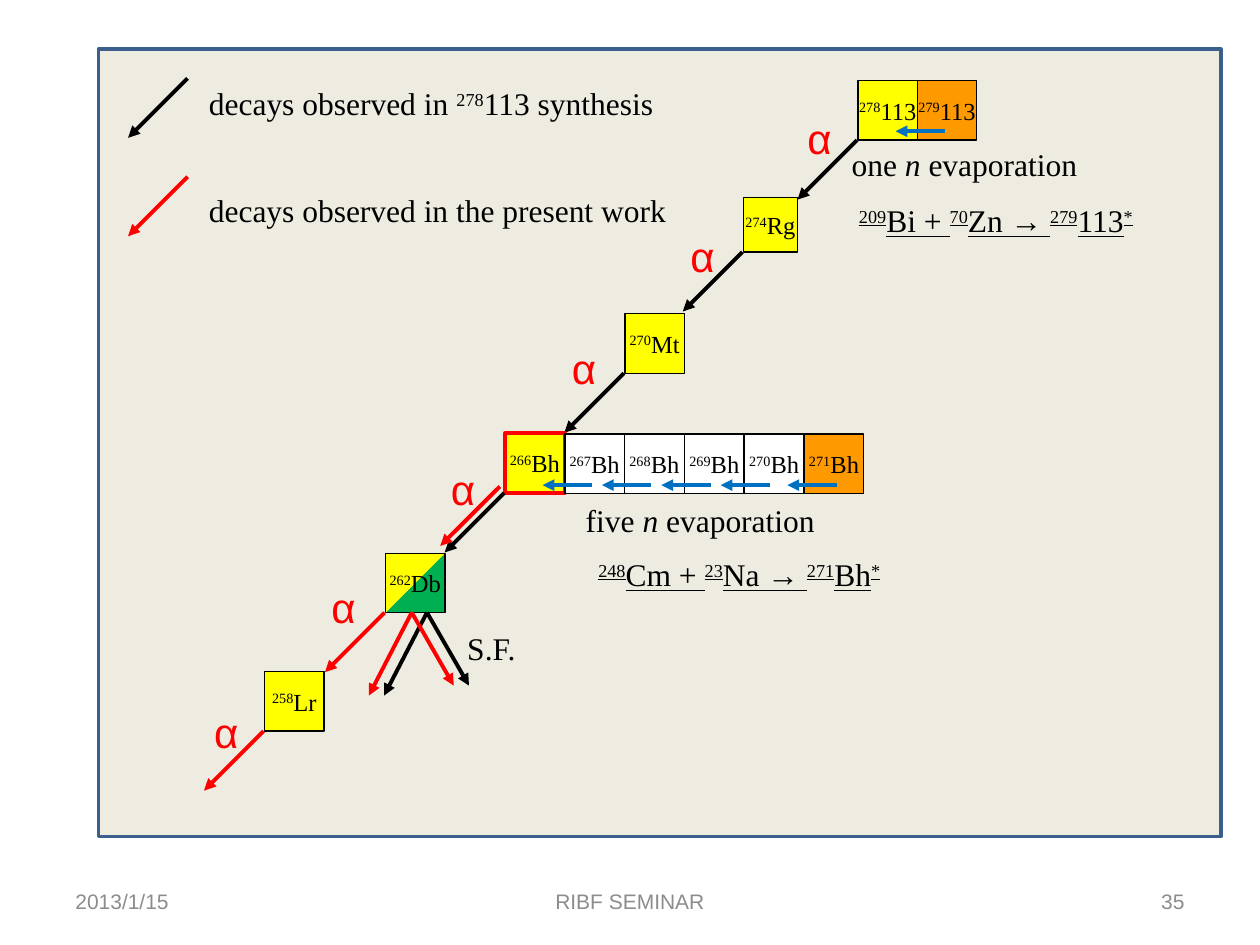
from pptx import Presentation
from pptx.dml.color import RGBColor
from pptx.enum.shapes import MSO_CONNECTOR, MSO_SHAPE
from pptx.enum.text import MSO_ANCHOR, MSO_AUTO_SIZE, PP_ALIGN
from pptx.oxml.ns import qn
from pptx.util import Pt
from lxml import etree

LINE = MSO_CONNECTOR.STRAIGHT
RECT, WEDGE = MSO_SHAPE.RECTANGLE, MSO_SHAPE.RIGHT_TRIANGLE
TOP, MIDDLE = MSO_ANCHOR.TOP, MSO_ANCHOR.MIDDLE
GROW, FIXED = MSO_AUTO_SIZE.SHAPE_TO_FIT_TEXT, MSO_AUTO_SIZE.NONE
LEFT, CENTER, RIGHT = PP_ALIGN.LEFT, PP_ALIGN.CENTER, PP_ALIGN.RIGHT

SERIF, SANS = "Times New Roman", "Arial"
BLACK, RED, BLUE, GRAY = "000000", "FF0000", "0070C0", "8C8C8C"
YELLOW, ORANGE, GREEN, WHITE = "FFFF00", "FF9900", "00B050", "FFFFFF"
CELL = 34


def color(code):
    """Turn a hex string into a colour."""
    return RGBColor.from_string(code)


class Chart:
    """Draw decay chart elements on one slide."""

    def __init__(self, slide):
        """Keep the slide to draw on."""
        self.slide = slide

    def shape(self, kind, box, fill=None, line=None, width=0.75):
        """Add a flat preset shape."""
        shape = self.slide.shapes.add_shape(kind, *map(Pt, box))
        shape.shadow.inherit = False
        if fill:
            shape.fill.solid()
            shape.fill.fore_color.rgb = color(fill)
        else:
            shape.fill.background()
        if line:
            shape.line.color.rgb = color(line)
            shape.line.width = Pt(width)
        else:
            shape.line.fill.background()
        return shape

    def wedge(self, box, fill, flip):
        """Add a right triangle mirrored along one axis."""
        shape = self.shape(WEDGE, box, fill)
        shape._element.spPr.xfrm.set(flip, "1")

    def text(self, frame, runs, size, font=SERIF, ink=BLACK, align=LEFT):
        """Add runs whose marks are ^ raised, i italic, u underlined."""
        para = frame.paragraphs[0]
        para.alignment = align
        for words, marks in runs:
            run = para.add_run()
            run.text = words
            run.font.size = Pt(size)
            run.font.name = font
            run.font.color.rgb = color(ink)
            if "i" in marks:
                run.font.italic = True
            if "u" in marks:
                run.font.underline = True
            if "^" in marks:
                run._r.get_or_add_rPr().set("baseline", "30000")

    def cell(self, mass, name, x, y, size=CELL, fill=None, line=BLACK, width=0.75):
        """Add one nuclide box."""
        frame = self.shape(RECT, (x, y, size, size), fill, line, width).text_frame
        frame.word_wrap = False
        frame.vertical_anchor = MIDDLE
        self.text(frame, [(mass, "^"), (name, "")], 14, align=CENTER)

    def label(self, box, runs, size=18, font=SERIF, ink=BLACK):
        """Add an unwrapped text box that fits its text."""
        frame = self.slide.shapes.add_textbox(*map(Pt, box)).text_frame
        frame.word_wrap = False
        frame.auto_size = GROW
        frame.vertical_anchor = TOP
        self.text(frame, runs, size, font, ink)

    def foot(self, x, width, words, align):
        """Add a footer field."""
        box = (x, 500.4, width, 28.8)
        frame = self.slide.shapes.add_textbox(*map(Pt, box)).text_frame
        frame.word_wrap = True
        frame.auto_size = FIXED
        frame.vertical_anchor = MIDDLE
        self.text(frame, [(words, "")], 12, SANS, GRAY, align)

    def arrow(self, x, y, dx, dy, ink=BLACK):
        """Add an arrow from a point by an offset."""
        ends = map(Pt, (x, y, x + dx, y + dy))
        link = self.slide.shapes.add_connector(LINE, *ends)
        link.line.color.rgb = color(ink)
        link.line.width = Pt(2.25)
        tail = etree.SubElement(link.line._get_or_add_ln(), qn("a:tailEnd"))
        tail.set("type", "triangle")
        etree.SubElement(link._element.spPr, qn("a:effectLst"))

    def decay(self, x, y, ink=BLACK):
        """Add a diagonal decay arrow."""
        self.arrow(x, y, -CELL, CELL, ink)


def main():
    """Build and save the slide."""
    deck = Presentation()
    deck.slide_width, deck.slide_height = Pt(720), Pt(540)
    chart = Chart(deck.slides.add_slide(deck.slide_layouts[6]))

    chart.shape(RECT, (56.2, 28.1, 641.5, 450), "EEECE1", "3A5F8C", 2)
    half = (220.3, 316.1, CELL, CELL)
    chart.wedge(half, GREEN, "flipH")
    chart.wedge(half, YELLOW, "flipV")

    chain = [
        ("278", "113", 490.3, 46.1, CELL, YELLOW, BLACK, 0.75),
        ("274", "Rg", 424.8, 113, 31, YELLOW, BLACK, 0.75),
        ("270", "Mt", 357.1, 179.3, CELL, YELLOW, BLACK, 0.75),
        ("266", "Bh", 288.7, 247.7, CELL, YELLOW, RED, 2.25),
        ("262", "Db", 220.3, 316.1, CELL, None, BLACK, 0.75),
        ("258", "Lr", 151.2, 383.8, CELL, YELLOW, BLACK, 0.75),
    ]
    alphas = [(454.3, 60.5), (387.4, 128.2), (319.7, 192.2),
              (250.6, 261.4), (182.2, 329), (115.2, 400.3)]
    for item, (left, top) in zip(chain, alphas):
        mass, name, x, y, size = item[:5]
        chart.cell(*item)
        chart.decay(x - 0.6, y + size, RED if name in ("Db", "Lr") else BLACK)
        chart.label((left, top, 29.5, 36), [("α", "")], 24, SANS, RED)
    chart.decay(285.6, 278, RED)

    for x, ink in ((244, BLACK), (235.3, RED)):
        chart.arrow(x, 350, -24.5, 47.5, ink)
        chart.arrow(x, 350, 24, 41.8, ink)

    chart.cell("279", "113", 524.2, 46.1, fill=ORANGE)
    for i in range(5):
        fill = ORANGE if i == 4 else WHITE
        chart.cell(str(267 + i), "Bh", 322.8 + 34.2 * i, 248, fill=fill)
    chart.arrow(540, 75, -28.2, 0, BLUE)
    for x in (478.1, 440, 406.1, 372.2, 338.3):
        chart.arrow(x, 277.2, -28.2, 0, BLUE)

    chart.decay(107.2, 44.8)
    chart.decay(107.2, 101, RED)
    chart.label((112.3, 44.6, 287.3, 28.8), [
        ("decays observed in ", ""), ("278", "^"), ("113 synthesis", "")])
    chart.label((112.3, 105.8, 283, 28.8),
                [("decays observed in the present work", "")])
    chart.label((259.9, 355.7, 42.5, 28.8), [("S.F.", "")])

    for count, x, y, width in (("one ", 479.5, 79.2, 144.7),
                               ("five ", 327.6, 283, 146.9)):
        chart.label((x, y, width, 28.8),
                    [(count, ""), ("n", "i"), (" evaporation", "")])

    fusions = [
        (483.8, 111.6, 182.9, ("209", "Bi + ", "70", "Zn → ", "279", "113", "*")),
        (334.8, 313.9, 184.3, ("248", "Cm + ", "23", "Na → ", "271", "Bh", "*")),
    ]
    for x, y, width, parts in fusions:
        runs = [(part, "u" if i % 2 else "u^") for i, part in enumerate(parts)]
        chart.label((x, y, width, 28.8), runs)

    chart.foot(36, 168, "2013/1/15", LEFT)
    chart.foot(516, 168, "35", RIGHT)
    chart.foot(246, 228, "RIBF SEMINAR", CENTER)
    deck.save("out.pptx")


if __name__ == "__main__":
    main()
